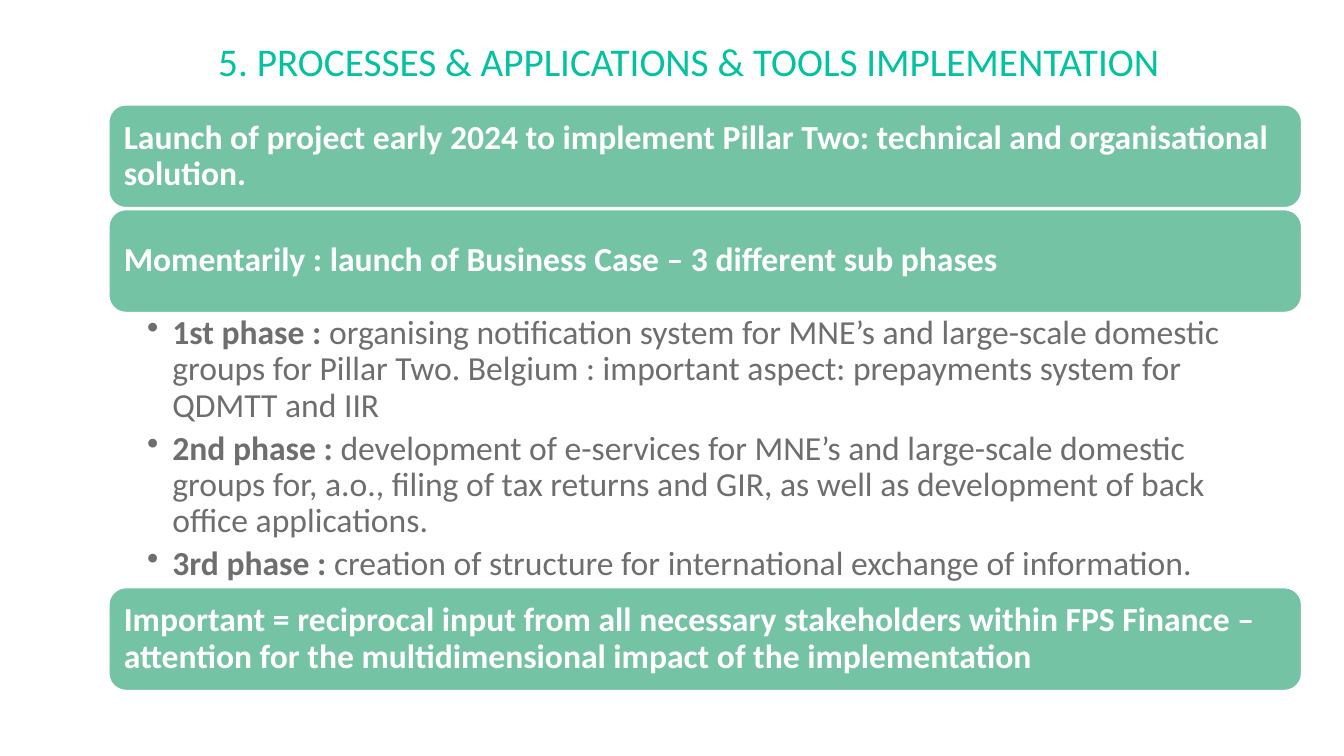
import pptx
import pptx.dml.color
import pptx.enum.shapes
import pptx.enum.text
import pptx.util
from lxml import etree

Inches = pptx.util.Inches
Pt = pptx.util.Pt
ALIGN = pptx.enum.text.PP_ALIGN
ANCHOR = pptx.enum.text.MSO_ANCHOR

LEFT, WIDTH = 1.08, 11.83
BANNER_HEIGHT = 1.02
BANNERS = [
    (1.04, "Launch of project early 2024 to implement Pillar Two: technical and organisational solution."),
    (2.08, "Momentarily : launch of Business Case – 3 different sub phases"),
    (5.83, "Important = reciprocal input from all necessary stakeholders within FPS Finance – "
           "attention for the multidimensional impact of the implementation"),
]
PHASES = [
    ("1st phase : ", "organising notification system for MNE’s and large-scale domestic groups "
                     "for Pillar Two. Belgium : important aspect: prepayments system for QDMTT and IIR"),
    ("2nd phase : ", "development of e-services for MNE’s and large-scale domestic groups for, a.o., "
                     "filing of tax returns and GIR, as well as development of back office applications."),
    ("3rd phase : ", "creation of structure for international exchange of information."),
]


def rgb(hex_code):
    return pptx.dml.color.RGBColor.from_string(hex_code)


def add_run(p, text, size=24, color="FFFFFF", bold=False):
    r = p.add_run()
    r.text = text
    r.font.name = "Calibri"
    r.font.size = Pt(size)
    r.font.bold = bold
    r.font.color.rgb = rgb(color)


def add_bullet(p, indent):
    pPr = p._p.get_or_add_pPr()
    pPr.set("marL", str(Inches(indent)))
    pPr.set("indent", str(-Inches(indent)))
    etree.SubElement(pPr, pptx.oxml.ns.qn("a:buChar")).set("char", "•")


class SlideBuilder:
    green, title_color, body_color = "75C3A5", "02C29F", "6E6E6E"

    def __init__(self, prs):
        self.slide = prs.slides.add_slide(prs.slide_layouts[6])

    def set_frame(self, sp, insets, anchor):
        """Set wrapping, anchor and insets (left, top, right, bottom)."""
        tf = sp.text_frame
        tf.word_wrap = True
        tf.vertical_anchor = anchor
        tf.margin_left, tf.margin_top, tf.margin_right, tf.margin_bottom = map(Inches, insets)
        return tf

    def add_text_box(self, box, insets, anchor):
        sp = self.slide.shapes.add_textbox(*map(Inches, box))
        return self.set_frame(sp, insets, anchor)

    def title(self, text):
        tf = self.add_text_box((LEFT, 0.34, 11.5, 0.58), (0.1, 0.05, 0.1, 0.05), ANCHOR.MIDDLE)
        p = tf.paragraphs[0]
        p.alignment = ALIGN.CENTER
        p.line_spacing = 0.9
        add_run(p, text, size=28, color=self.title_color)

    def banner(self, top, text):
        sp = self.slide.shapes.add_shape(
            pptx.enum.shapes.MSO_SHAPE.ROUNDED_RECTANGLE,
            *map(Inches, (LEFT, top, WIDTH, BANNER_HEIGHT)))
        sp.shadow.inherit = False
        sp.fill.solid()
        sp.fill.fore_color.rgb = rgb(self.green)
        sp.line.color.rgb = rgb("FFFFFF")
        sp.line.width = Pt(1)
        p = self.set_frame(sp, (0.1, 0.1, 0.1, 0.1), ANCHOR.MIDDLE).paragraphs[0]
        p.alignment = ALIGN.LEFT
        p.line_spacing = 0.9
        add_run(p, text, bold=True)

    def phase_list(self, phases):
        tf = self.add_text_box((LEFT, 3.1, WIDTH, 2.72), (0.38, 0.03, 0.19, 0.03), ANCHOR.TOP)
        for i, (label, text) in enumerate(phases):
            p = tf.add_paragraph() if i else tf.paragraphs[0]
            p.level = 1
            add_bullet(p, 0.25)
            p.line_spacing = 0.9
            p.space_after = Pt(4.8)
            add_run(p, label, color=self.body_color, bold=True)
            add_run(p, text, color=self.body_color)


def main():
    prs = pptx.Presentation()
    prs.slide_width = Inches(13.33)
    prs.slide_height = Inches(7.5)
    s = SlideBuilder(prs)
    s.title("5. PROCESSES & APPLICATIONS & TOOLS IMPLEMENTATION")
    for top, text in BANNERS:
        s.banner(top, text)
    s.phase_list(PHASES)
    prs.save("out.pptx")


if __name__ == "__main__":
    main()
